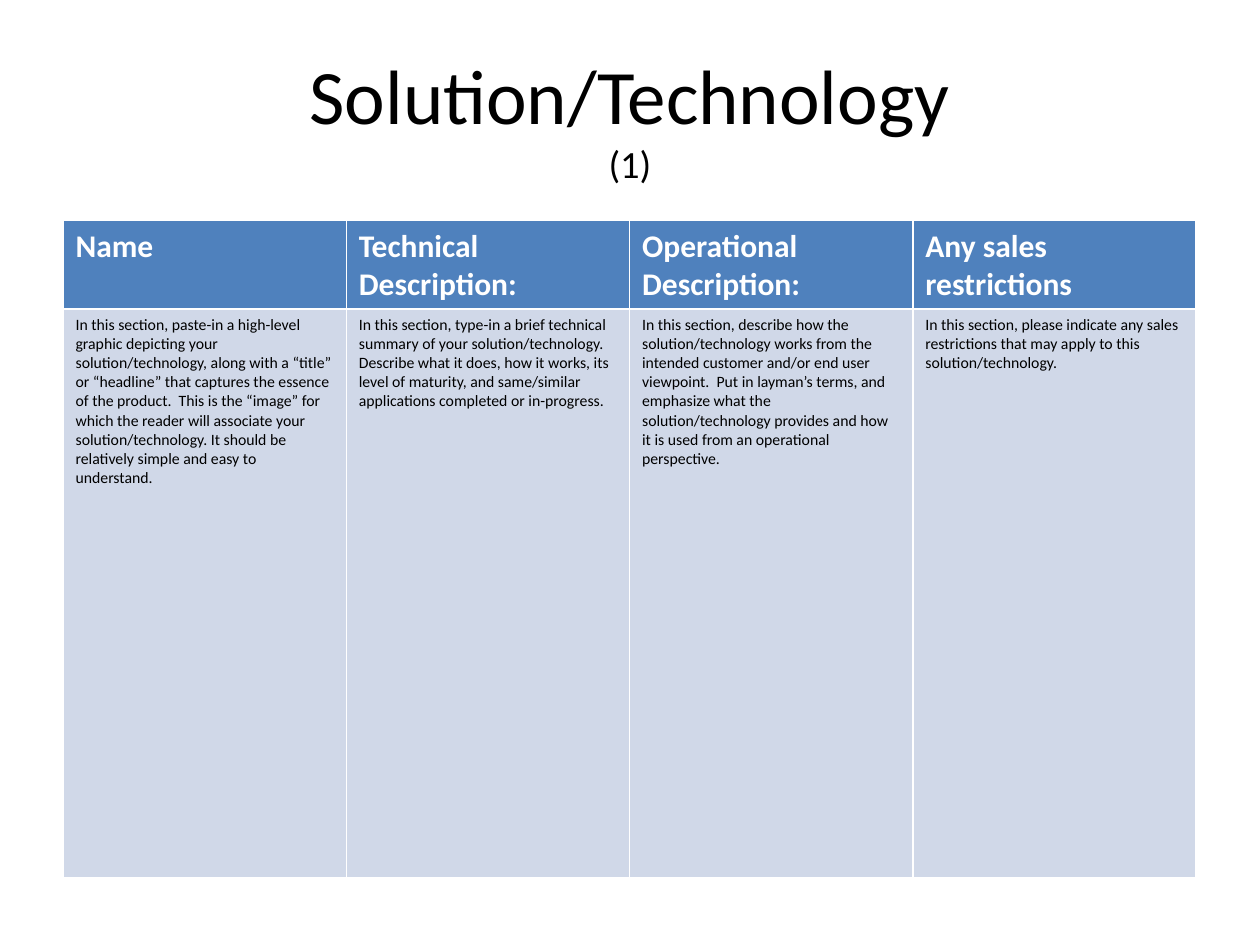
from typing import NamedTuple

from pptx import Presentation
from pptx import util as u
from pptx.dml.color import RGBColor
from pptx.enum import text

FONT = "Calibri"
BLACK, WHITE = "000000", "FFFFFF"
HEADER_BLUE, BODY_BLUE = "4F81BD", "D0D8E8"


class Section(NamedTuple):
    heading: str
    guidance: str


class CellStyle(NamedTuple):
    size: float
    color: str
    fill: str
    bold: bool


HEADING = CellStyle(18, WHITE, HEADER_BLUE, True)
GUIDANCE = CellStyle(9, BLACK, BODY_BLUE, False)

SECTIONS = [
    Section(
        "Name",
        "In this section, paste-in a high-level graphic depicting your "
        "solution/technology, along with a “title” or “headline” that captures "
        "the essence of the product.  This is the “image” for which the reader "
        "will associate your solution/technology. It should be relatively "
        "simple and easy to understand.",
    ),
    Section(
        "Technical Description:",
        "In this section, type-in a brief technical summary of your "
        "solution/technology.  Describe what it does, how it works, its level "
        "of maturity, and same/similar applications completed or in-progress.",
    ),
    Section(
        "Operational Description:",
        "In this section, describe how the solution/technology works from the "
        "intended customer and/or end user viewpoint.  Put in layman’s terms, "
        "and emphasize what the solution/technology provides and how it is "
        "used from an operational perspective.",
    ),
    Section(
        "Any sales restrictions",
        "In this section, please indicate any sales restrictions that may "
        "apply to this solution/technology.",
    ),
]


def rgb(value: str) -> RGBColor:
    return RGBColor.from_string(value)


def format_run(run, size: float, color: str, bold: bool = False) -> None:
    run.font.name = FONT
    run.font.size = u.Pt(size)
    run.font.bold = bold
    run.font.color.rgb = rgb(color)


def add_title(slide) -> None:
    title = slide.shapes.add_textbox(u.Cm(1.27), u.Cm(0.76), u.Cm(22.86), u.Cm(3.18))
    frame = title.text_frame
    frame.word_wrap = True
    frame.vertical_anchor = text.MSO_ANCHOR.MIDDLE
    frame.text = "Solution/Technology\v(1)"
    heading = frame.paragraphs[0]
    heading.alignment = text.PP_ALIGN.CENTER
    for run, size in zip(heading.runs, (44, 22)):
        format_run(run, size, BLACK)


def fill_cell(cell, content: str, style: CellStyle) -> None:
    cell.text_frame.text = content
    cell.fill.solid()
    cell.fill.fore_color.rgb = rgb(style.fill)
    for run in cell.text_frame.paragraphs[0].runs:
        format_run(run, style.size, style.color, style.bold)


def add_sections(slide, sections: list[Section]) -> None:
    column_width = u.Cm(5.71)
    row_heights = u.Cm(1.78), u.Cm(11.46)
    table = slide.shapes.add_table(
        len(row_heights), len(sections), u.Cm(1.27), u.Cm(4.45),
        column_width * len(sections), sum(row_heights),
    ).table
    for row, height in zip(table.rows, row_heights):
        row.height = height
    for index, section in enumerate(sections):
        table.columns[index].width = column_width
        fill_cell(table.cell(0, index), section.heading, HEADING)
        fill_cell(table.cell(1, index), section.guidance, GUIDANCE)


def main() -> None:
    deck = Presentation()
    deck.slide_width, deck.slide_height = u.Cm(25.4), u.Cm(19.05)
    slide = deck.slides.add_slide(deck.slide_layouts[6])
    add_title(slide)
    add_sections(slide, SECTIONS)
    deck.save("out.pptx")


if __name__ == "__main__":
    main()
